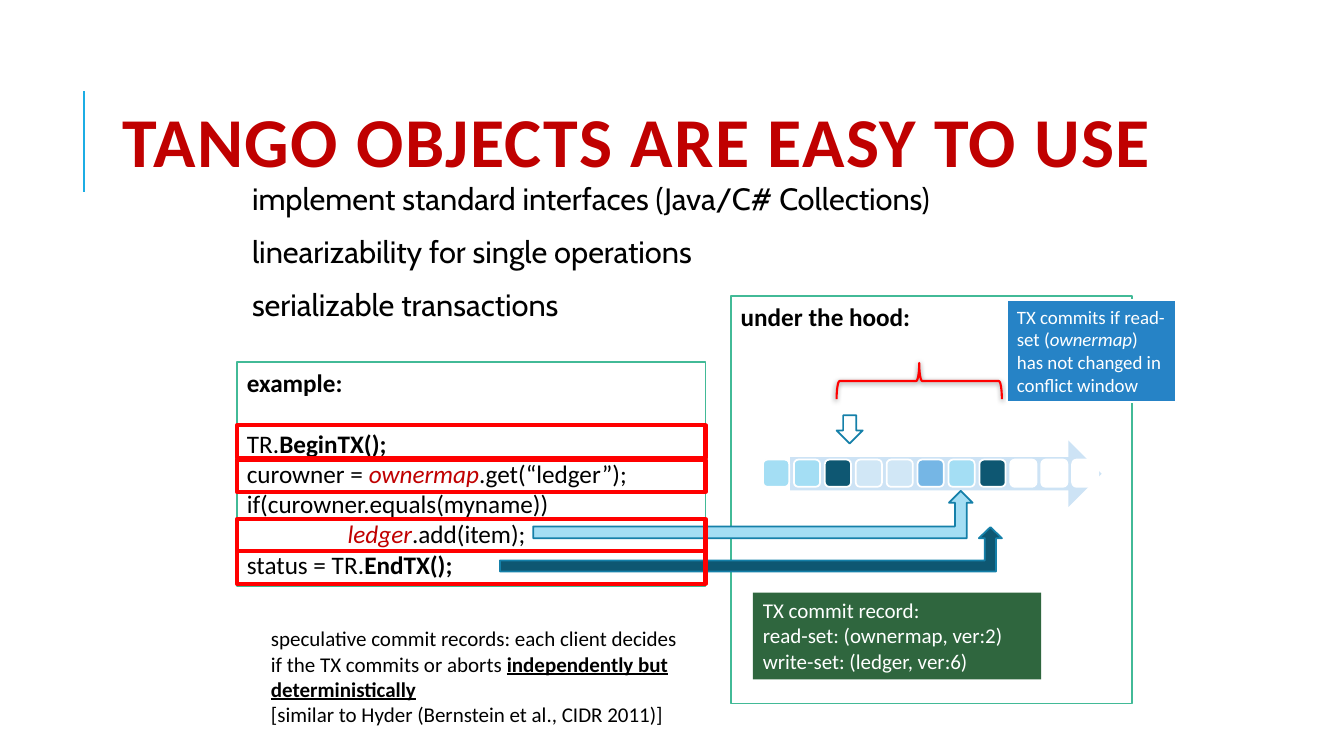
from lxml.etree import SubElement
from pptx import Presentation
from pptx.dml.color import RGBColor
from pptx.enum.shapes import MSO_CONNECTOR, MSO_SHAPE as Preset
from pptx.enum.text import MSO_ANCHOR as Anchor, PP_ALIGN as Align
from pptx.oxml.ns import qn
from pptx.util import Inches, Pt

COLUMNS, ROWS = 80, 45
WIDTH, HEIGHT = Inches(13.333), Inches(7.5)
BLACK, WHITE, RED, CRIMSON = "000000", "FFFFFF", "FF0000", "C00000"
TEAL, EDGE, PALE, SKY, MID, DEEP = "42BA97", "1580A9", "D1E7F6", "A4DEF4", "75B6E5", "0E5772"


def color(hex_code):
    """Turn a hex string into a colour."""
    return RGBColor.from_string(hex_code)


def across(columns):
    """Convert grid columns to a length."""
    return int(WIDTH * columns / COLUMNS)


def down(rows):
    """Convert grid rows to a length."""
    return int(HEIGHT * rows / ROWS)


def place(box):
    """Convert a grid box to left, top, width and height."""
    left, top, width, height = box
    return across(left), down(top), across(width), down(height)


def add_block(slide, preset, box, fill=None, line=None, weight=1.25):
    """Add a preset shape with a plain fill and outline."""
    block = slide.shapes.add_shape(preset, *place(box))
    block.shadow.inherit = False
    if fill:
        block.fill.solid()
        block.fill.fore_color.rgb = color(fill)
    else:
        block.fill.background()
    if line:
        block.line.color.rgb = color(line)
        block.line.width = Pt(weight)
    else:
        block.line.fill.background()
    return block


def write(holder, lines, size, ink=BLACK, font="Calibri", anchor=Anchor.TOP):
    """Fill a holder with lines of (text, style) runs and return its paragraphs."""
    frame = holder.text_frame
    frame.word_wrap = True
    frame.vertical_anchor = anchor
    frame.text = "\n" * (len(lines) - 1)
    for paragraph, pieces in zip(frame.paragraphs, lines):
        paragraph.alignment = Align.LEFT
        for text, style in pieces:
            run = paragraph.add_run()
            run.text = text
            run.font.name = font
            run.font.size = Pt(size)
            run.font.bold = "b" in style
            run.font.italic = "i" in style
            run.font.underline = "u" in style
            run.font.color.rgb = color(CRIMSON if "r" in style else ink)
    return frame.paragraphs


def add_text(slide, box, lines, size, **look):
    """Add a text box and return its paragraphs."""
    return write(slide.shapes.add_textbox(*place(box)), lines, size, **look)


def add_accent(slide):
    """Draw the thin vertical rule beside the title."""
    accent = slide.shapes.add_connector(
        MSO_CONNECTOR.STRAIGHT, across(5), down(11.4), across(5), down(5.4))
    accent.line.color.rgb = color("1CADE4")
    accent.line.width = Pt(1.5)
    SubElement(accent._element.spPr, qn("a:effectLst"))


def add_log(slide):
    """Draw the shared log as an arrow carrying a row of entries."""
    add_block(slide, Preset.RIGHT_ARROW, (47.04, 26.22, 18.54, 3.96), "CDE3F5")
    entries = [SKY, SKY, DEEP, PALE, PALE, MID, SKY, DEEP] + [WHITE] * 4
    for index, fill in enumerate(entries):
        add_block(slide, Preset.ROUNDED_RECTANGLE,
                  (45.42 + 1.84 * index, 27.36, 1.56, 1.62), fill, WHITE)


def add_heading(slide):
    """Write the title and the three claims below it."""
    title, = add_text(slide, (6.72, 3.84, 70.32, 9.84),
                      [[("TANGO OBJECTS ARE EASY TO USE", "b")]], 50,
                      ink=CRIMSON, anchor=Anchor.MIDDLE)
    title.line_spacing = 0.8
    title.runs[0].font._element.set("spc", "100")
    claims_box = slide.shapes.add_textbox(*place((14.1, 10.68, 52.8, 21.42)))
    claims = write(claims_box, [
        [("implement standard interfaces (Java/C# Collections)", "")],
        [("linearizability for single operations", "")],
        [("serializable transactions", "")]], 22, font="Cabin")
    claims_box.text_frame.margin_left = Inches(0.15)
    claims_box.text_frame.margin_right = Inches(0.05)
    for claim in claims:
        claim.line_spacing = 0.9
        claim.space_before = Pt(12)
        claim.space_after = Pt(2)


def add_example(slide):
    """Write the sample transaction in its frame."""
    example = add_block(slide, Preset.RECTANGLE, (14.1, 21.54, 27.9, 13.32), WHITE, TEAL)
    code = write(example, [
        [("example:", "b")],
        [("TR.", ""), ("BeginTX();", "b")],
        [("curowner = ", ""), ("ownermap", "ir"), (".get(“ledger”);", "")],
        [("if(curowner.equals(myname))", "")],
        [("ledger", "ir"), (".add(item);", "")],
        [("status = TR.", ""), ("EndTX();", "b")]], 18)
    code[1].space_before = Pt(22)
    code[4]._p.get_or_add_pPr().set("marL", str(Inches(1)))


def add_conflict_window(slide):
    """Draw the shadowed brace over the conflict window."""
    brace = add_block(slide, Preset.RIGHT_BRACE, (53.64, 17.76, 2.16, 9.84), None, RED, 1.5)
    brace.rotation = 270
    effects = brace._element.spPr.find(qn("a:effectLst"))
    shadow = SubElement(effects, qn("a:outerShdw"), blurRad=str(Pt(4)),
                        dist=str(Pt(1)), dir="5400000", rotWithShape="0")
    shade = SubElement(shadow, qn("a:srgbClr"), val=BLACK)
    SubElement(shade, qn("a:alpha"), val="50000")


def add_pointers(slide):
    """Draw the arrows that lead to log entries."""
    add_block(slide, Preset.BENT_UP_ARROW, (31.74, 29.22, 26.16, 2.82), SKY, EDGE)
    commit = add_block(slide, Preset.BENT_UP_ARROW, (29.76, 31.38, 29.88, 2.64), DEEP, EDGE)
    commit.adjustments[1] = 0.26
    add_block(slide, Preset.DOWN_ARROW, (49.8, 24.72, 1.56, 1.68), WHITE, EDGE)


def add_notes(slide):
    """Write the commit rule, the commit record and the closing remark."""
    rule = add_block(slide, Preset.RECTANGLE, (59.94, 17.88, 10.08, 6.06),
                     "2683C6", WHITE, 1.5)
    write(rule, [[("TX commits if read-set (", ""), ("ownermap", "i"),
                  (") has not changed in conflict window", "")]], 13.5, WHITE)
    record = add_block(slide, Preset.RECTANGLE, (44.82, 35.28, 17.16, 5.16), "2F663E")
    write(record, [[("TX commit record:", "")],
                   [("read-set: (ownermap, ver:2)", "")],
                   [("write-set: (ledger, ver:6)", "")]], 15, WHITE)
    add_text(slide, (15.54, 36.96, 25.38, 6.66), [
        [("speculative commit records: each client decides if the TX commits or aborts ", ""),
         ("independently but deterministically", "bu")],
        [("[similar to Hyder (Bernstein et al., CIDR 2011)]", "")]], 15)


def main():
    """Build the slide and save it."""
    deck = Presentation()
    deck.slide_width, deck.slide_height = WIDTH, HEIGHT
    slide = deck.slides.add_slide(deck.slide_layouts[6])
    add_accent(slide)
    hood = add_block(slide, Preset.RECTANGLE, (43.5, 17.64, 23.88, 24.24), WHITE, TEAL)
    write(hood, [[("under the hood:", "b")]], 18)
    add_log(slide)
    add_heading(slide)
    add_example(slide)
    add_pointers(slide)
    add_conflict_window(slide)
    add_notes(slide)
    for top in (25.32, 27.36, 30.9, 32.82):
        add_block(slide, Preset.RECTANGLE, (14.1, top, 27.9, 1.92), None, RED, 3)
    deck.save("out.pptx")


if __name__ == "__main__":
    main()
